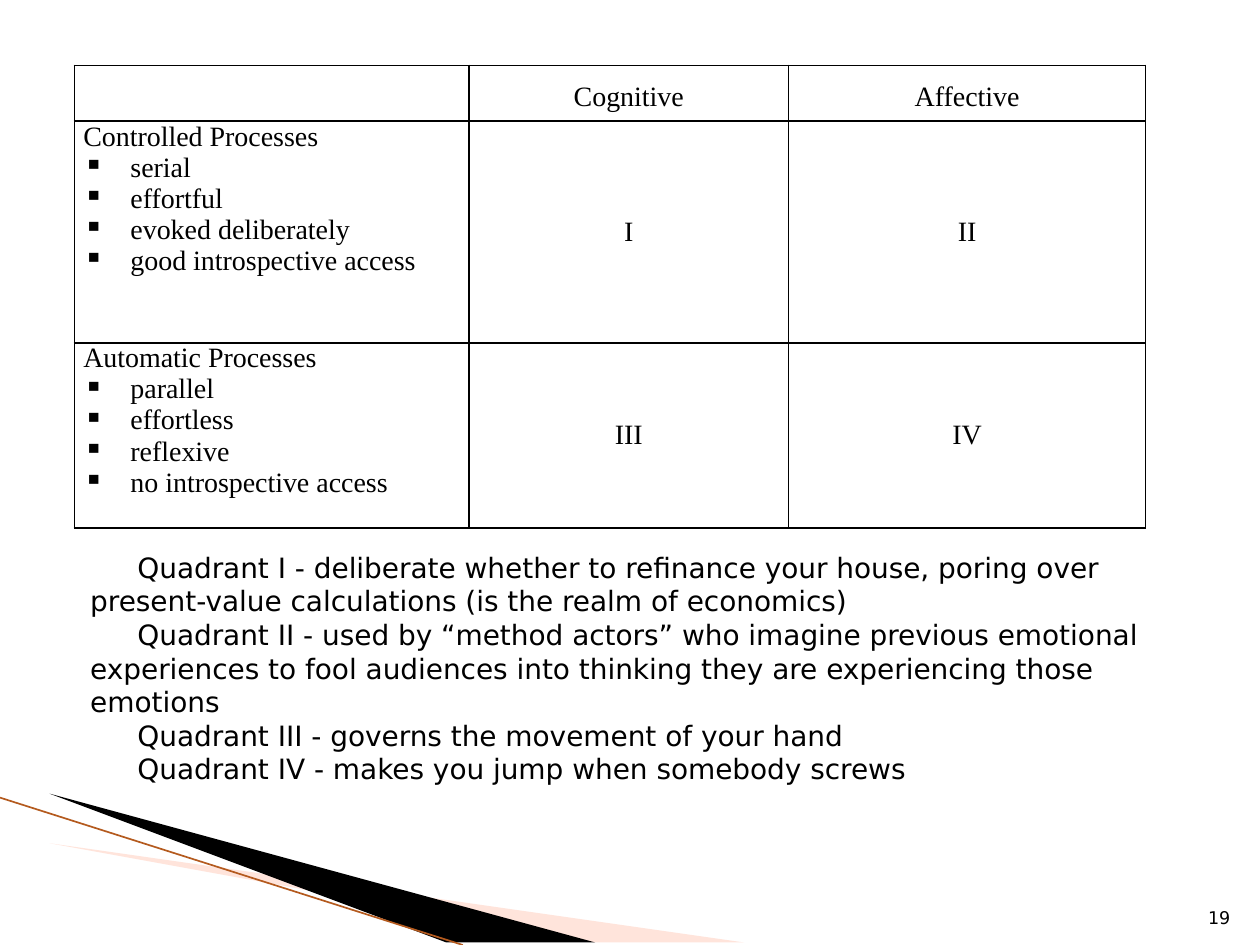
from dataclasses import dataclass

from lxml.etree import SubElement
from pptx import Presentation
from pptx.dml.color import RGBColor as RGB
from pptx.enum.shapes import MSO_CONNECTOR as Link
from pptx.enum.text import MSO_ANCHOR as Anchor, PP_ALIGN as Align
from pptx.oxml import parse_xml
from pptx.oxml.ns import nsdecls, qn
from pptx.util import Cm, Pt

BLACK = RGB(0, 0, 0)
WHITE = RGB(255, 255, 255)
PEACH = RGB(0xFF, 0xBC, 0xA5)
RUST = RGB(0xB4, 0x5A, 0x1E)
SERIF, SANS = "Times New Roman", "DejaVu Sans"
INDENT = Cm(0.95)


@dataclass
class Wedge:
    points: list[tuple[float, float]]
    color: RGB
    alpha: int = 100


@dataclass
class Process:
    name: str
    traits: list[str]
    quads: tuple[str, str]


@dataclass
class Box:
    left: float
    top: float
    width: float
    height: float


WEDGES = [
    Wedge([(1.4, 16.52), (15.02, 19.05), (11.5, 19.05)], PEACH, 40),
    Wedge([(1.35, 16.48), (11.5, 19.05), (9.33, 19.05)], BLACK),
]
HEADS = ["", "Cognitive", "Affective"]
ROWS = [
    Process("Controlled Processes",
            ["serial", "effortful", "evoked deliberately",
             "good introspective access"], ("I", "II")),
    Process("Automatic Processes",
            ["parallel", "effortless", "reflexive",
             "no introspective access"], ("III", "IV")),
]
WIDTHS = [7.95, 6.45, 7.19]
HEIGHTS = [1.12, 4.47, 3.73]
NOTES = [
    "Quadrant I - deliberate whether to refinance your house, poring over "
    "present-value calculations (is the realm of economics)",
    "Quadrant II - used by “method actors” who imagine previous emotional "
    "experiences to fool audiences into thinking they are experiencing "
    "those emotions",
    "Quadrant III - governs the movement of your hand",
    "Quadrant IV - makes you jump when somebody screws",
]


def style(para, face: str, size: float) -> None:
    para.font.name = face
    para.font.size = Pt(size)
    para.font.color.rgb = BLACK


def draw_wedge(slide, wedge: Wedge) -> None:
    start, *rest = wedge.points
    pen = slide.shapes.build_freeform(*start, scale=Cm(1))
    pen.add_line_segments(rest)
    shape = pen.convert_to_shape()
    shape.shadow.inherit = False
    shape.line.fill.background()
    shape.fill.solid()
    shape.fill.fore_color.rgb = wedge.color
    if wedge.alpha < 100:
        color = shape.fill._xPr.find(".//" + qn("a:srgbClr"))
        SubElement(color, qn("a:alpha"), val=str(wedge.alpha * 1000))


def draw_edge(slide) -> None:
    edge = slide.shapes.add_connector(
        Link.STRAIGHT, Cm(0), Cm(16.08), Cm(9.33), Cm(19.05))
    edge.line.color.rgb = RUST
    edge.line.width = Pt(0.95)
    SubElement(edge._element.spPr, qn("a:effectLst"))


def add_bullet(para) -> None:
    props = para._p.get_or_add_pPr()
    props.set("marL", str(INDENT))
    props.set("indent", str(-INDENT))
    SubElement(props, qn("a:buChar"), char="▪")
    tabs = SubElement(props, qn("a:tabLst"))
    SubElement(tabs, qn("a:tab"), pos=str(2 * INDENT), algn="l")


def fill_cell(cell, lines: list[str], center: bool) -> None:
    cell.margin_left = cell.margin_right = Cm(0.18)
    cell.margin_top = cell.margin_bottom = 0
    cell.fill.solid()
    cell.fill.fore_color.rgb = WHITE
    for spot, side in enumerate(("lnL", "lnR", "lnT", "lnB")):
        cell._tc.tcPr.insert(spot, parse_xml(
            f'<a:{side} {nsdecls("a")} w="{Pt(1)}"><a:solidFill>'
            f'<a:srgbClr val="{BLACK}"/></a:solidFill></a:{side}>'))
    frame = cell.text_frame
    frame.text = "\n".join(lines)
    for spot, para in enumerate(frame.paragraphs):
        if center:
            para.alignment = Align.CENTER
        if spot:
            add_bullet(para)
        style(para, SERIF, 16)


def draw_table(slide) -> None:
    table = slide.shapes.add_table(
        len(HEIGHTS), len(WIDTHS), Cm(1.5), Cm(1.32),
        Cm(sum(WIDTHS)), Cm(sum(HEIGHTS))).table
    for col, width in zip(table.columns, WIDTHS):
        col.width = Cm(width)
    for row, height in zip(table.rows, HEIGHTS):
        row.height = Cm(height)
    table.first_row = table.horz_banding = False

    # Column heads
    for col, head in enumerate(HEADS):
        cell = table.cell(0, col)
        fill_cell(cell, [head], True)
        if head:
            cell.text_frame.paragraphs[0].line_spacing = 1.5

    # Processes and their quadrants
    for row, proc in enumerate(ROWS, 1):
        fill_cell(table.cell(row, 0), [proc.name, *proc.traits], False)
        for col, quad in enumerate(proc.quads, 1):
            cell = table.cell(row, col)
            fill_cell(cell, [quad], True)
            cell.vertical_anchor = Anchor.MIDDLE


def add_text(slide, box: Box, lines: list[str], size: float):
    frame = slide.shapes.add_textbox(
        Cm(box.left), Cm(box.top), Cm(box.width), Cm(box.height)).text_frame
    frame.word_wrap = True
    frame.text = "\n".join(lines)
    for para in frame.paragraphs:
        style(para, SANS, size)
    return frame


def main() -> None:
    deck = Presentation()
    deck.slide_width, deck.slide_height = Cm(25.4), Cm(19.05)
    slide = deck.slides.add_slide(deck.slide_layouts[6])

    # Corner decoration
    for wedge in WEDGES:
        draw_wedge(slide, wedge)
    draw_edge(slide)

    # Quadrant notes, first lines indented
    notes = add_text(slide, Box(1.57, 10.97, 22.43, 5.82), NOTES, 16)
    for para in notes.paragraphs:
        para._p.get_or_add_pPr().set("indent", str(INDENT))

    # Slide number
    number = add_text(slide, Box(24.03, 17.81, 1.02, 1.02), ["19"], 10)
    number.vertical_anchor = Anchor.BOTTOM
    number.paragraphs[0].alignment = Align.RIGHT

    draw_table(slide)
    deck.save("out.pptx")


if __name__ == "__main__":
    main()
